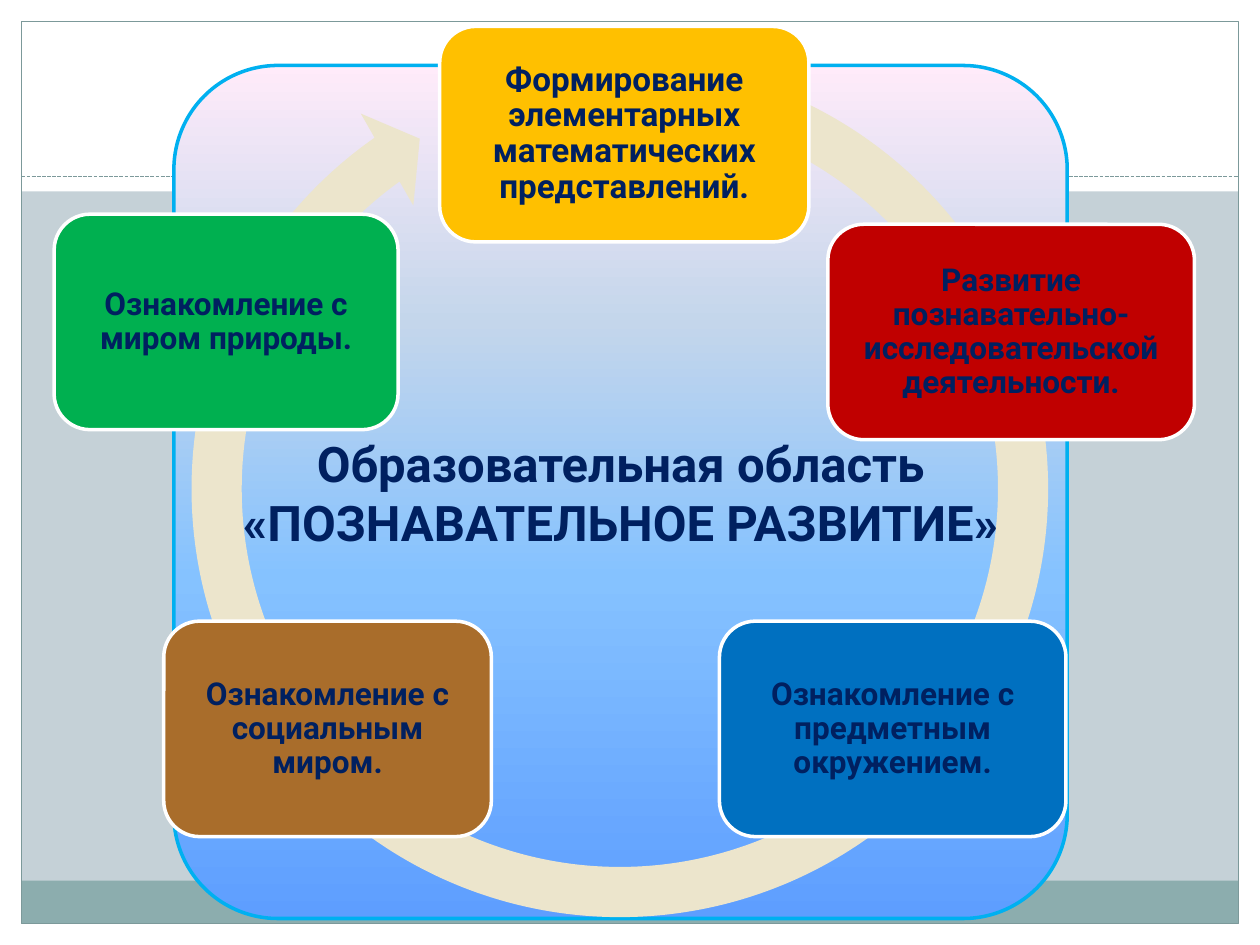
from lxml.etree import SubElement
from pptx import Presentation
from pptx.dml.color import RGBColor
from pptx.enum.dml import MSO_LINE
from pptx.enum.shapes import MSO_CONNECTOR, MSO_SHAPE
from pptx.enum.text import MSO_ANCHOR, PP_ALIGN
from pptx.oxml.ns import qn
from pptx.util import Inches, Pt

COLORS = {
    "background": "C5D1D7", "white": "FFFFFF", "footer": "8CADAE",
    "frame": "7C999A", "panel line": "00B0F0", "arrow": "ECE5CC",
    "text": "002060", "yellow": "FFC000", "red": "C00000",
    "blue": "0070C0", "brown": "A96D2B", "green": "00B050",
}
PANEL_GRADIENT = [(0, "5E9EFF"), (40, "85C2FF"), (70, "C4D6EB"), (100, "FFEBFA")]
FONT = "Roboto"
CARD_HEIGHT = 1.71

# Left and top from the cycle's corner, width, colour, text size, text
CARDS = [
    (2.19, -0.05, 2.93, "yellow", 19,
     "Формирование элементарных математических представлений."),
    (5.27, 1.52, 2.91, "red", 18,
     "Развитие познавательно-исследовательской деятельности."),
    (4.41, 4.67, 2.75, "blue", 18, "Ознакомление с предметным окружением."),
    (0, 4.67, 2.6, "brown", 18, "Ознакомление с социальным миром."),
    (-0.87, 1.44, 2.73, "green", 18, "Ознакомление с миром природы."),
]


def rgb(name):
    return RGBColor.from_string(COLORS[name])


def add_block(slide, preset, box, fill=None, line=None, line_width=0.75):
    shape = slide.shapes.add_shape(preset, *(Inches(length) for length in box))
    shape.shadow.inherit = False
    if fill:
        shape.fill.solid()
        shape.fill.fore_color.rgb = rgb(fill)
    else:
        shape.fill.background()
    if line:
        shape.line.color.rgb = rgb(line)
        shape.line.width = Pt(line_width)
    else:
        shape.line.fill.background()
    return shape


def write_text(shape, text, size, line_spacing=1.0):
    frame = shape.text_frame
    frame.text = text
    frame.word_wrap = True
    frame.vertical_anchor = MSO_ANCHOR.MIDDLE
    paragraph = frame.paragraphs[0]
    paragraph.alignment = PP_ALIGN.CENTER
    paragraph.line_spacing = line_spacing
    font = paragraph.runs[0].font
    font.name, font.size, font.bold = FONT, Pt(size), True
    font.color.rgb = rgb("text")


def add_backdrop(slide, left, top, width, height):
    """White margins, footer band, thin frame and dashed rule."""
    slide.background.fill.solid()
    slide.background.fill.fore_color.rgb = rgb("background")
    margin, header, footer = 0.17, 1.52, 0.34
    right, bottom = left + width, top + height
    inner_width = width - 2 * margin

    for box in [
        (left, bottom - margin, width, margin),
        (left, top, width, header),
        (left, top, margin, height),
        (right - margin, top, margin, height),
    ]:
        add_block(slide, MSO_SHAPE.RECTANGLE, box, "white")
    add_block(slide, MSO_SHAPE.RECTANGLE,
              (left + margin, bottom - margin - footer, inner_width, footer), "footer")
    add_block(slide, MSO_SHAPE.RECTANGLE,
              (left + margin, top + margin, inner_width, height - 2 * margin),
              line="frame")

    rule_y = Inches(top + 1.4)
    rule = slide.shapes.add_connector(
        MSO_CONNECTOR.STRAIGHT,
        Inches(left + margin), rule_y, Inches(right - margin), rule_y)
    rule.line.color.rgb = rgb("frame")
    rule.line.width = Pt(0.75)
    rule.line.dash_style = MSO_LINE.SQUARE_DOT
    SubElement(rule._element.spPr, qn("a:effectLst"))


def add_panel(slide, left, top, width, height):
    """Rounded gradient panel with the central heading."""
    panel = add_block(slide, MSO_SHAPE.ROUNDED_RECTANGLE,
                      (left, top, width, height), line="panel line", line_width=2)
    panel.adjustments[0] = 0.122
    panel.fill.gradient()
    panel.fill.gradient_angle = 90
    stops = panel._element.spPr.find(qn("a:gradFill")).find(qn("a:gsLst"))
    for stop in list(stops):
        stops.remove(stop)
    for percent, color in PANEL_GRADIENT:
        stop = SubElement(stops, qn("a:gs"), pos=str(percent * 1000))
        SubElement(stop, qn("a:srgbClr"), val=color)
    write_text(panel, "Образовательная область «ПОЗНАВАТЕЛЬНОЕ РАЗВИТИЕ»", 28)


def add_cycle(slide, left, top, size):
    """Circular arrow with the five cards around it."""
    arrow = add_block(slide, MSO_SHAPE.CIRCULAR_ARROW, (left, top, size, size), "arrow")
    for index, value in enumerate([0.055, 3.307, 140.843, 172.01, 0.058]):
        arrow.adjustments[index] = value

    for offset_x, offset_y, width, color, text_size, text in CARDS:
        card = add_block(slide, MSO_SHAPE.ROUNDED_RECTANGLE,
                         (left + offset_x, top + offset_y, width, CARD_HEIGHT),
                         color, "white", 2)
        frame = card.text_frame
        frame.margin_left = frame.margin_right = Inches(0.08)
        frame.margin_top = frame.margin_bottom = Inches(0.08)
        write_text(card, text, text_size, 0.9)


def main():
    presentation = Presentation()
    presentation.slide_width = Inches(10)
    presentation.slide_height = Inches(7.5)
    slide = presentation.slides.add_slide(presentation.slide_layouts[6])
    add_backdrop(slide, 0, 0, 10, 7.5)
    add_panel(slide, 1.38, 0.52, 7.09, 6.77)
    add_cycle(slide, 1.3, 0.26, 7.24)
    presentation.save("out.pptx")


if __name__ == "__main__":
    main()
